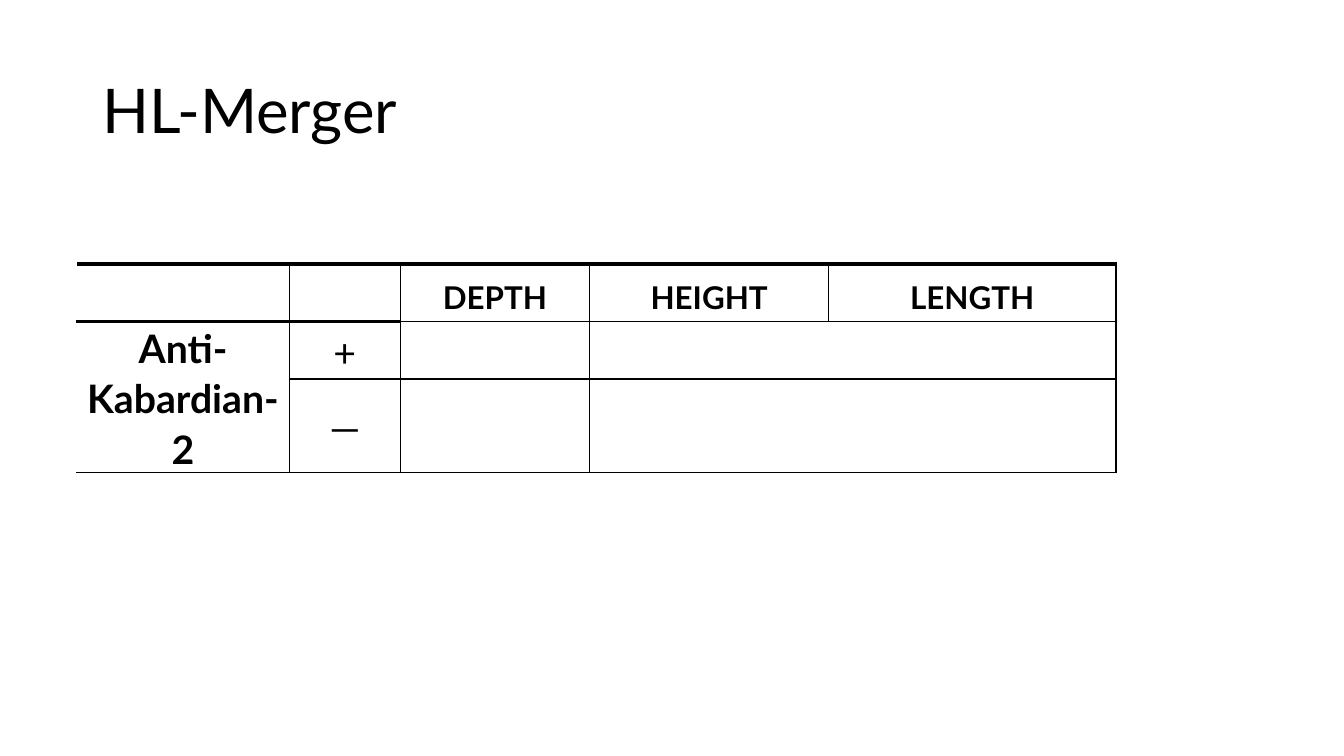
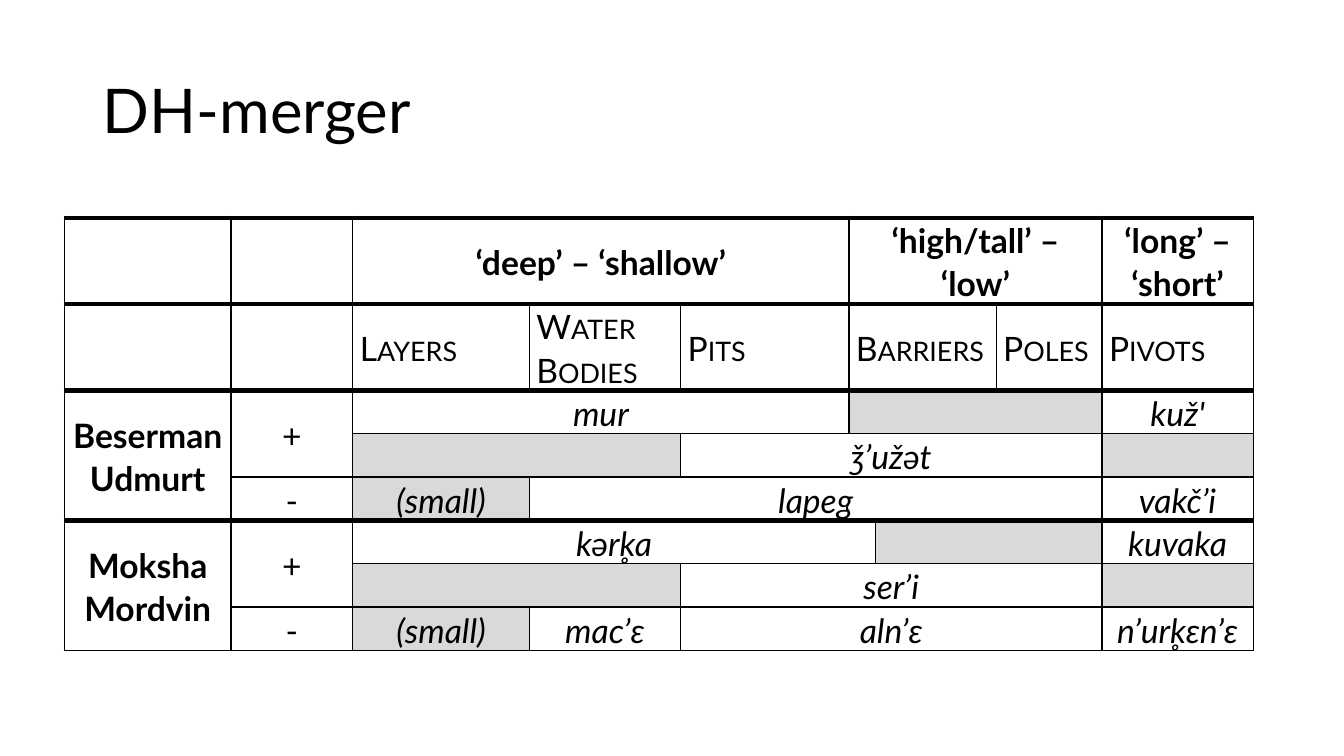
from pptx import Presentation
from pptx.dml.color import RGBColor
from pptx.enum.text import MSO_ANCHOR, MSO_AUTO_SIZE, PP_ALIGN
from pptx.util import Inches, Pt
from lxml import etree

MIDDLE = MSO_ANCHOR.MIDDLE
NO_FIT = MSO_AUTO_SIZE.NONE
LEFT, CENTER = PP_ALIGN.LEFT, PP_ALIGN.CENTER
DRAWING = "{http://schemas.openxmlformats.org/drawingml/2006/main}"

FONT = "Lato"
BLACK, WHITE, GREY = "000000", "FFFFFF", "D9D9D9"
TITLE_ONLY = 5
TITLE_AREA = (0.92, 0.4, 11.5, 1.45)

STYLES = {
    "plain": {},
    "bold": {"bold": True},
    "caps": {"small_caps": True, "align": LEFT},
    "bold caps": {"bold": True, "small_caps": True},
    "italic": {"italic": True},
    "grey": {"italic": True, "fill": GREY},
}

# Each cell: row, column, text, style, rows spanned, columns spanned
HL_MERGER = {
    "title": "HL-Merger",
    "corner": (0.76, 2.62),
    "columns": [2.11, 1.1, 1.88, 2.37, 2.85],
    "rows": [0.57, 0.57, 0.57],
    "size": 28,
    "left_edge": WHITE,
    "label_rules": [3, 3, 1, 1],
    "rules": [3, 1, 1, 1],
    "cells": [
        (0, 2, "depth", "bold caps", 1, 1),
        (0, 3, "height", "bold caps", 1, 1),
        (0, 4, "length", "bold caps", 1, 1),
        (1, 0, "Anti-Kabardian-2", "bold", 2, 1),
        (1, 1, "+", "plain", 1, 1),
        (1, 3, "", "plain", 1, 2),
        (2, 1, "—", "plain", 1, 1),
        (2, 3, "", "plain", 1, 2),
    ],
}

DH_RULES = [3, 3, 4.5, 1, 2.25, 4.5, 1, 2.25, 1]
DH_MERGER = {
    "title": "DH-merger",
    "corner": (0.64, 2.16),
    "columns": [1.65, 1.21, 1.75, 1.5, 1.67, 0.26, 1.2, 1.05, 1.5],
    "rows": [0.85] * 2 + [0.43] * 6,
    "size": 24,
    "left_edge": BLACK,
    "label_rules": DH_RULES,
    "rules": DH_RULES,
    "cells": [
        (0, 2, "‘deep’ – ‘shallow’", "bold", 1, 3),
        (0, 5, "‘high/tall’ – ‘low’", "bold", 1, 3),
        (0, 8, "‘long’ – ‘short’", "bold", 1, 1),
        (1, 2, "Layers", "caps", 1, 1),
        (1, 3, "Water Bodies", "caps", 1, 1),
        (1, 4, "Pits", "caps", 1, 1),
        (1, 5, "Barriers", "caps", 1, 2),
        (1, 7, "Poles", "caps", 1, 1),
        (1, 8, "Pivots", "caps", 1, 1),
        (2, 0, "Beserman Udmurt", "bold", 3, 1),
        (2, 1, "+", "plain", 2, 1),
        (2, 2, "mur", "italic", 1, 3),
        (2, 5, "", "grey", 1, 3),
        (2, 8, "kuž'", "italic", 1, 1),
        (3, 2, "", "grey", 1, 2),
        (3, 4, "ǯʼužət", "italic", 1, 4),
        (3, 8, "", "grey", 1, 1),
        (4, 1, "-", "plain", 1, 1),
        (4, 2, "(small)", "grey", 1, 1),
        (4, 3, "lapeg", "italic", 1, 5),
        (4, 8, "vakčʼi", "italic", 1, 1),
        (5, 0, "Moksha Mordvin", "bold", 3, 1),
        (5, 1, "+", "plain", 2, 1),
        (5, 2, "kər̥ka", "italic", 1, 4),
        (5, 6, "", "grey", 1, 2),
        (5, 8, "kuvaka", "italic", 1, 1),
        (6, 2, "", "grey", 1, 2),
        (6, 4, "ser’i", "italic", 1, 4),
        (6, 8, "", "grey", 1, 1),
        (7, 1, "-", "plain", 1, 1),
        (7, 2, "(small)", "grey", 1, 1),
        (7, 3, "mac’ɛ", "italic", 1, 1),
        (7, 4, "aln’ɛ", "italic", 1, 4),
        (7, 8, "n’ur̥kɛn’ɛ", "italic", 1, 1),
    ],
}


def color(value):
    return RGBColor.from_string(value)


def set_font(para, size):
    para.font.name = FONT
    para.font.size = Pt(size)
    para.font.color.rgb = color(BLACK)


def add_title(page, text):
    title = page.shapes.title
    title.left, title.top, title.width, title.height = map(Inches, TITLE_AREA)
    frame = title.text_frame
    frame.text = text
    frame.auto_size = NO_FIT
    frame.vertical_anchor = MIDDLE
    para = frame.paragraphs[0]
    para.alignment = LEFT
    para.line_spacing = 0.9
    set_font(para, 44)


def set_borders(cell, borders):
    properties = cell._tc.get_or_add_tcPr()
    for position, (side, (value, points)) in enumerate(borders.items()):
        line = etree.Element(f"{DRAWING}ln{side}", w=str(Pt(points)))
        fill = etree.SubElement(line, f"{DRAWING}solidFill")
        etree.SubElement(fill, f"{DRAWING}srgbClr", val=value)
        properties.insert(position, line)


def format_cell(cell, text, style, size):
    cell.margin_left = cell.margin_right = Inches(0.07)
    cell.margin_top = cell.margin_bottom = 0
    cell.vertical_anchor = MIDDLE
    if "fill" in style:
        cell.fill.solid()
        cell.fill.fore_color.rgb = color(style["fill"])
    else:
        cell.fill.background()
    cell.text = text
    para = cell.text_frame.paragraphs[0]
    para.alignment = style.get("align", CENTER)
    para.line_spacing = 1.07
    set_font(para, size)
    para.font.bold = style.get("bold", False)
    para.font.italic = style.get("italic", False)
    if style.get("small_caps"):
        para._p.get_or_add_pPr().get_or_add_defRPr().set("cap", "small")


def add_grid(page, content):
    columns, rows = content["columns"], content["rows"]
    left, top = content["corner"]
    frame = page.shapes.add_table(
        len(rows), len(columns), Inches(left), Inches(top),
        Inches(sum(columns)), Inches(sum(rows)))
    table = frame.table
    table.first_row = table.horz_banding = False
    for column, width in zip(table.columns, columns):
        column.width = Inches(width)
    for row, height in zip(table.rows, rows):
        row.height = Inches(height)

    areas = list(content["cells"])
    covered = {(r, c) for row, column, _, _, high, wide in areas
               for r in range(row, row + high)
               for c in range(column, column + wide)}
    areas += [(r, c, "", "plain", 1, 1)
              for r in range(len(rows)) for c in range(len(columns))
              if (r, c) not in covered]
    for row, column, text, style, high, wide in areas:
        cell = table.cell(row, column)
        if high * wide > 1:
            cell.merge(table.cell(row + high - 1, column + wide - 1))
        format_cell(cell, text, STYLES[style], content["size"])
        rules = content["label_rules" if column < 2 else "rules"]
        borders = {
            "L": (BLACK if column else content["left_edge"], 1),
            "R": (BLACK, 1),
            "T": (BLACK, rules[row]),
            "B": (BLACK, rules[row + high]),
        }
        for r in range(row, row + high):
            for c in range(column, column + wide):
                set_borders(table.cell(r, c), borders)


def main():
    """Build the two slides on dimension-term mergers."""
    deck = Presentation()
    deck.slide_width, deck.slide_height = Inches(13.33), Inches(7.5)
    for content in (HL_MERGER, DH_MERGER):
        page = deck.slides.add_slide(deck.slide_layouts[TITLE_ONLY])
        add_title(page, content["title"])
        add_grid(page, content)
    deck.save("out.pptx")


if __name__ == "__main__":
    main()
